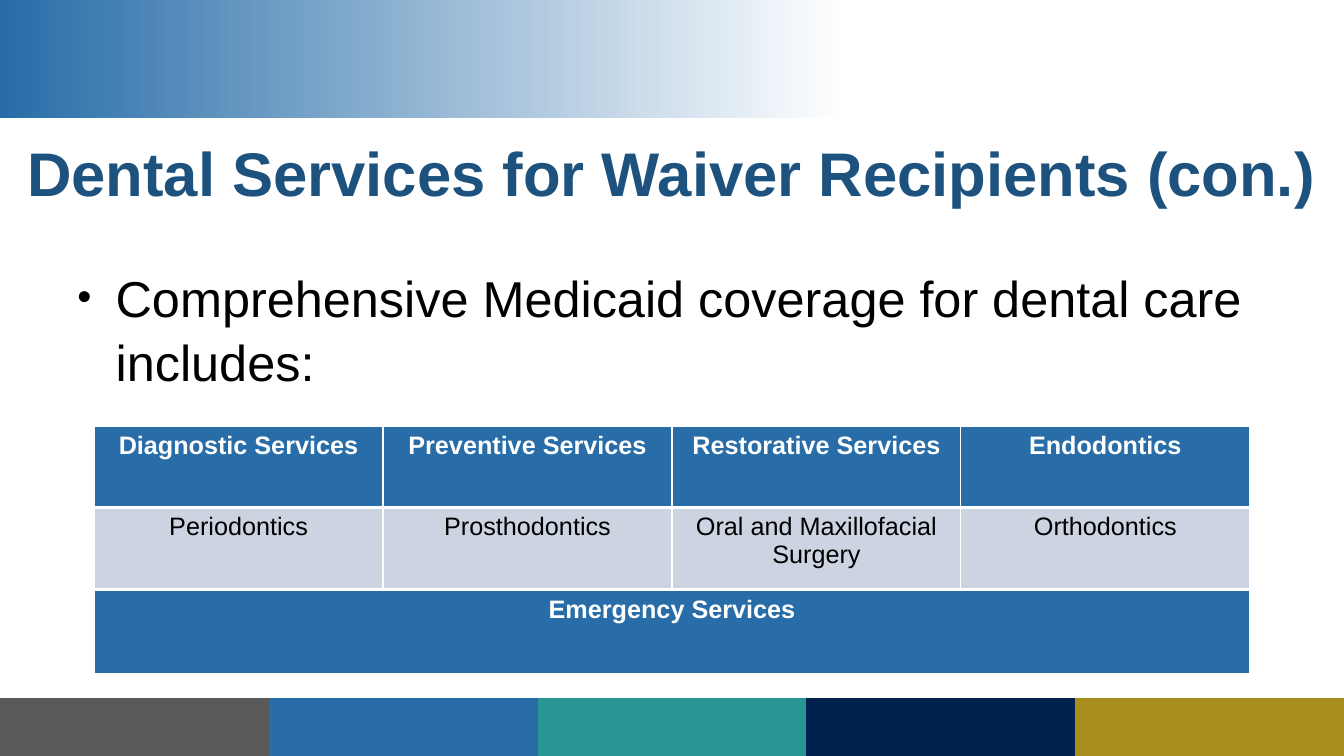
from lxml.etree import SubElement
from pptx import Presentation
from pptx.dml.color import RGBColor
from pptx.enum.shapes import MSO_SHAPE
from pptx.enum.text import MSO_ANCHOR, MSO_AUTO_SIZE, PP_ALIGN
from pptx.oxml.ns import qn
from pptx.util import Inches, Pt

BLUE = RGBColor(0x28, 0x6D, 0xA8)
TITLE_BLUE = RGBColor(0x1E, 0x52, 0x7E)
PALE_BLUE = RGBColor(0xCD, 0xD4, 0xE1)
GRAY = RGBColor(0x59, 0x59, 0x59)
TEAL = RGBColor(0x28, 0x96, 0x93)
NAVY = RGBColor(0x01, 0x22, 0x4F)
GOLD = RGBColor(0xA7, 0x8D, 0x1E)
WHITE = RGBColor(0xFF, 0xFF, 0xFF)
BLACK = RGBColor(0x00, 0x00, 0x00)

COLUMNS, ROWS = 100, 75


class SlideBuilder:
    """Places elements on a grid of 100 columns and 75 rows."""

    font_name = "Arial"

    def __init__(self, presentation):
        self.width = presentation.slide_width
        self.height = presentation.slide_height
        self.slide = presentation.slides.add_slide(presentation.slide_layouts[1])

    def box(self, left, top, width, height):
        column, row = self.width / COLUMNS, self.height / ROWS
        return [round(value) for value in
                (left * column, top * row, width * column, height * row)]

    def style(self, paragraph, size, color, bold=False):
        for run in paragraph.runs:
            font = run.font
            font.name, font.size, font.bold = self.font_name, Pt(size), bold
            font.color.rgb = color

    def place(self, shape, *area):
        shape.left, shape.top, shape.width, shape.height = self.box(*area)

    def gradient_band(self, start, end, end_position, *area):
        shape = self.slide.shapes.add_shape(MSO_SHAPE.RECTANGLE, *self.box(*area))
        shape.shadow.inherit = False
        shape.line.fill.background()
        shape.fill.gradient()
        shape.fill.gradient_angle = 0
        stops = shape.fill.gradient_stops
        for stop, color, position in zip(stops, (start, end), (0, end_position)):
            stop.color.rgb = color
            stop.position = position

    def title(self, text, *area):
        shape = self.slide.shapes.title
        self.place(shape, *area)
        frame = shape.text_frame
        frame.text = text
        frame.auto_size = MSO_AUTO_SIZE.NONE
        frame.vertical_anchor = MSO_ANCHOR.MIDDLE
        frame.margin_left = frame.margin_right = 0
        frame.margin_top = frame.margin_bottom = 0
        paragraph = frame.paragraphs[0]
        paragraph.alignment = PP_ALIGN.CENTER
        paragraph.line_spacing = Pt(40)
        self.style(paragraph, 44, TITLE_BLUE, bold=True)

    def bullet(self, text, *area):
        shape = self.slide.placeholders[1]
        self.place(shape, *area)
        frame = shape.text_frame
        frame.text = text
        frame.auto_size = MSO_AUTO_SIZE.NONE
        paragraph = frame.paragraphs[0]
        paragraph.line_spacing = 1.06
        paragraph.space_before = Pt(0)
        properties = paragraph._p.get_or_add_pPr()
        properties.set("marL", str(Inches(0.38)))
        properties.set("indent", str(-Inches(0.38)))
        bullet_color = SubElement(properties, qn("a:buClr"))
        SubElement(bullet_color, qn("a:srgbClr"), val=str(BLACK))
        SubElement(properties, qn("a:buSzPct"), val="80000")
        SubElement(properties, qn("a:buChar"), char="•")
        self.style(paragraph, 36, BLACK)

    def borders(self, cell, widths):
        """Draws left, right, top and bottom lines; a zero width hides one."""
        properties = cell._tc.get_or_add_tcPr()
        for side, width in zip("LRTB", widths):
            line = SubElement(properties, qn(f"a:ln{side}"), w=str(Pt(width)))
            if width:
                fill = SubElement(line, qn("a:solidFill"))
                SubElement(fill, qn("a:srgbClr"), val=str(WHITE))
            else:
                SubElement(line, qn("a:noFill"))

    def table(self, texts, fills, widths, *area):
        """Fills and border widths are given per row; fills also per cell."""
        table = self.slide.shapes.add_table(
            len(texts), len(texts[0]), *self.box(*area)).table
        table.first_row = table.horz_banding = False
        for row, (row_texts, row_fills) in enumerate(zip(texts, fills)):
            for column, (text, color) in enumerate(zip(row_texts, row_fills)):
                cell = table.cell(row, column)
                self.borders(cell, widths[row])
                cell.fill.solid()
                cell.fill.fore_color.rgb = color
                cell.text_frame.text = text
                paragraph = cell.text_frame.paragraphs[0]
                paragraph.alignment = PP_ALIGN.CENTER
                is_heading = color == BLUE
                self.style(paragraph, 18, WHITE if is_heading else BLACK, is_heading)


def main():
    presentation = Presentation()
    presentation.slide_width, presentation.slide_height = Inches(13.33), Inches(7.5)
    builder = SlideBuilder(presentation)

    # Header band and title
    builder.gradient_band(BLUE, WHITE, 0.63, 0, 0, COLUMNS, 11.7)
    builder.title("Dental Services for Waiver Recipients (con.)", 0, 12.9, COLUMNS, 10.1)

    # Footer colour strip
    strip = [GRAY, BLUE, TEAL, NAVY, GOLD]
    builder.table([[""] * len(strip)], [strip], [(0, 0, 0, 0)], 0, 69.2, COLUMNS, 5.8)

    # Introduction
    builder.bullet("Comprehensive Medicaid coverage for dental care includes:",
                   5, 25.6, 95, 22.2)

    # Covered services
    services = [
        ["Diagnostic Services", "Preventive Services", "Restorative Services", "Endodontics"],
        ["Periodontics", "Prosthodontics", "Oral and Maxillofacial Surgery", "Orthodontics"],
    ]
    builder.table(services, [[BLUE] * 4, [PALE_BLUE] * 4],
                  [(1, 1, 1, 3), (1, 1, 3, 1)], 7, 42.3, 86, 16.1)
    builder.table([["Emergency Services"]], [[BLUE]], [(1, 1, 1, 3)], 7, 58.6, 86, 8.4)

    presentation.save("out.pptx")


if __name__ == "__main__":
    main()
